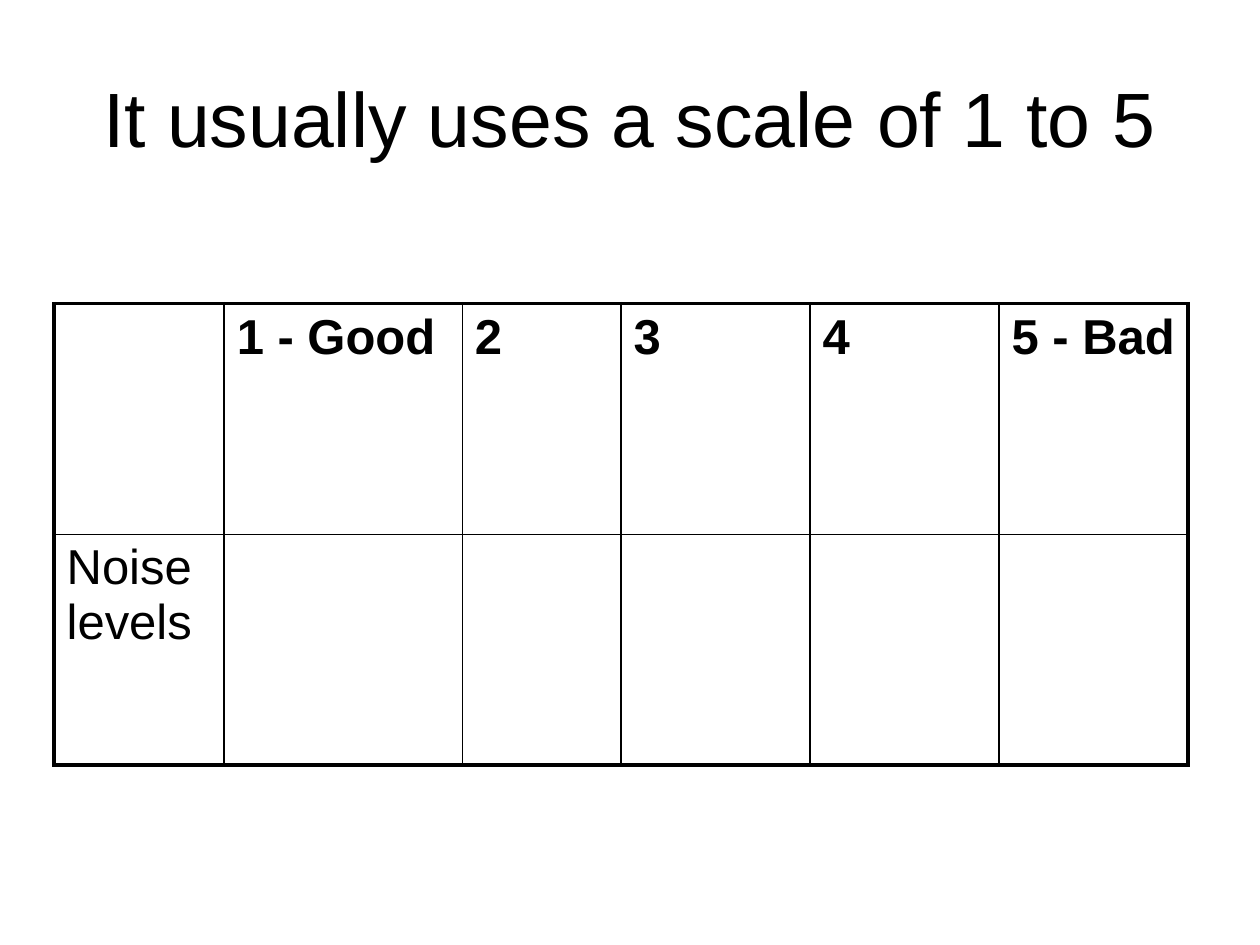
from dataclasses import dataclass

from lxml.etree import SubElement
from pptx import Presentation
from pptx.dml.color import RGBColor
from pptx.enum.text import MSO_ANCHOR as Anchor, PP_ALIGN as Align
from pptx.oxml.ns import qn
from pptx.util import Cm, Pt


@dataclass(frozen=True)
class Theme:
    font: str = "Arial"
    ink: str = "000000"
    paper: str = "FFFFFF"
    title: float = 44
    body: float = 28
    thin: float = 1
    thick: float = 2.25


@dataclass(frozen=True)
class Box:
    left: float
    top: float
    width: float
    height: float

    def args(self) -> tuple:
        return Cm(self.left), Cm(self.top), Cm(self.width), Cm(self.height)


THEME = Theme()
TITLE = Box(1.27, 0.76, 22.86, 3.18)
GRID = Box(1.09, 6.12, 22.86, 9.3)
COLS = (3.43, 4.8, 3.2, 3.81, 3.81, 3.81)
ROWS = (
    ("", "1 - Good", "2", "3", "4", "5 - Bad"),
    ("Noise levels", "", "", "", "", ""),
)


def write(frame, text: str, *, size: float, bold: bool = False,
          align=Align.LEFT, anchor=Anchor.TOP) -> None:
    frame.word_wrap = True
    frame.vertical_anchor = anchor
    para = frame.paragraphs[0]
    para.alignment = align
    para.font.size = Pt(size)
    if text:
        run = para.add_run()
        run.text = text
        font = run.font
        font.name, font.size, font.bold = THEME.font, Pt(size), bold
        font.color.rgb = RGBColor.from_string(THEME.ink)


def edge(cell, side: str, width: float) -> None:
    line = SubElement(cell._tc.get_or_add_tcPr(), qn(f"a:ln{side}"),
                      w=str(Pt(width)))
    fill = SubElement(line, qn("a:solidFill"))
    SubElement(fill, qn("a:srgbClr"), val=THEME.ink)


def draw_grid(slide) -> None:
    """Draw the scale table with a thick frame and thin inner lines."""
    count, span = len(ROWS), len(COLS)
    table = slide.shapes.add_table(count, span, *GRID.args()).table
    table.horz_banding = False
    for col, width in zip(table.columns, COLS):
        col.width = Cm(width)
    for r, row in enumerate(ROWS):
        table.rows[r].height = Cm(GRID.height / count)
        for c, text in enumerate(row):
            cell = table.cell(r, c)
            outer = {"L": c == 0, "R": c == span - 1,
                     "T": r == 0, "B": r == count - 1}
            for side, thick in outer.items():
                edge(cell, side, THEME.thick if thick else THEME.thin)
            cell.fill.background()
            write(cell.text_frame, text, size=THEME.body, bold=r == 0)


def main() -> None:
    deck = Presentation()
    deck.slide_width, deck.slide_height = Cm(25.4), Cm(19.05)
    slide = deck.slides.add_slide(deck.slide_layouts[6])
    back = slide.background.fill
    back.solid()
    back.fore_color.rgb = RGBColor.from_string(THEME.paper)
    title = slide.shapes.add_textbox(*TITLE.args())
    write(title.text_frame, "It usually uses a scale of 1 to 5",
          size=THEME.title, align=Align.CENTER, anchor=Anchor.MIDDLE)
    draw_grid(slide)
    deck.save("out.pptx")


if __name__ == "__main__":
    main()
